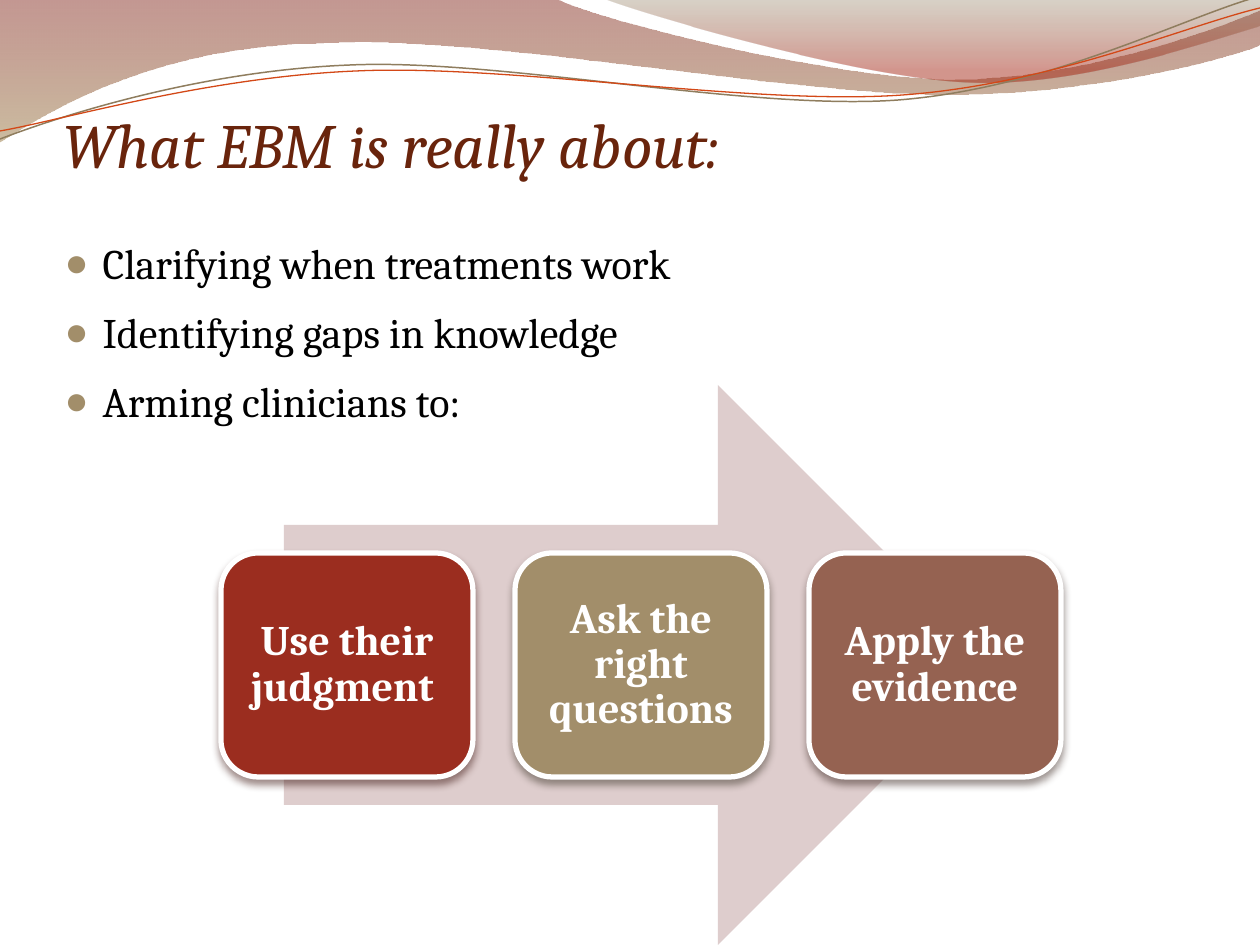
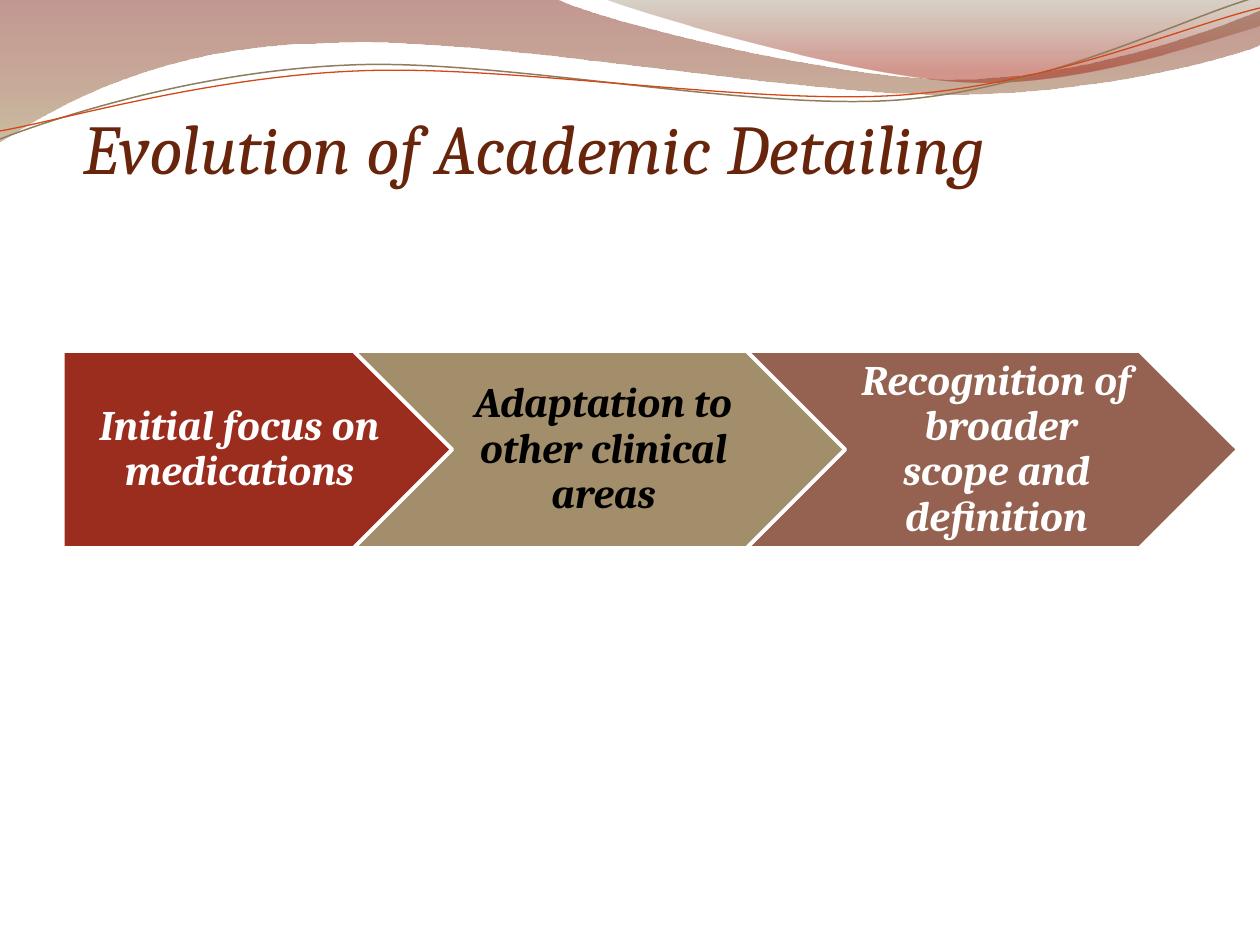
from lxml.etree import SubElement
from pptx import Presentation
from pptx.dml.color import RGBColor
from pptx.enum.shapes import MSO_SHAPE
from pptx.enum.text import MSO_ANCHOR, MSO_AUTO_SIZE, PP_ALIGN
from pptx.oxml import parse_xml
from pptx.oxml.ns import nsdecls, qn
from pptx.util import Pt

PX = 914400 / 126
FACE = "Cambria"
INK, WHITE, BLACK = "69240C", "FFFFFF", "000000"
RUST, SAND, CLAY, BLUSH = "9B2D1F", "A28E6A", "956251", "DECDCD"

# Each wave: start point, then segments of one point (line) or three (curve).
BANDS = [
    {"start": (0, 0), "segs": [
        [(556, -1)],
        [(600, 21), (837, 79), (955, 79)],
        [(1075, 79), (1207, 33), (1260, 11)],
        [(1261, 45)],
        [(1239, 55), (1096, 96), (940, 94)],
        [(784, 94), (481, 35), (324, 43)],
        [(163, 45), (58, 105), (-1, 142)]],
     "stops": [(0, "7C1A0E", 45), (100, "A18552", 55)]},
    {"start": (604, -1), "segs": [
        [(641, 14), (859, 78), (969, 82)],
        [(1079, 87), (1211, 40), (1260, 26)],
        [(1260, 0)]],
     "stops": [(0, "7E6B48", 30), (80, "9F1705", 45)]},
    {"start": (0, 139), "segs": [
        [(60, 116), (199, 71), (349, 65)],
        [(498, 58), (747, 111), (898, 100)],
        [(1050, 88), (1182, 18), (1257, -3)]],
     "line": ("8F7D5E", 0.85)},
    {"start": (0, 131), "segs": [
        [(59, 121), (207, 77), (357, 71)],
        [(508, 64), (752, 106), (903, 95)],
        [(1053, 84), (1185, 26), (1260, 8)]],
     "line": ("D34817", 0.75)},
]

ABOUT = {
    "title": ("What EBM is really about:", (63, 63, 1134, 118), 36),
    "list": ["Clarifying when treatments work",
             "Identifying gaps in knowledge",
             "Arming clinicians to:"],
    "list_box": (52, 231, 1134, 605),
    "arrow": (284, 385, 714, 560),
    "cards": [("Use their judgment ", RUST, "370F0A"),
              ("Ask the right questions", SAND, "393225"),
              ("Apply the evidence", CLAY, "35221C")],
}
STAGES = {
    "title": ("Evolution of Academic Detailing", (84, 32, 1239, 157), 40),
    "steps": [("Initial focus on medications", RUST, WHITE),
              ("Adaptation to other clinical areas", SAND, BLACK),
              ("Recognition of  broader scope and definition", CLAY, WHITE)],
}


def emu(px):
    return round(px * PX)


def rgb(code):
    return RGBColor.from_string(code)


def put(obj, **vals):
    for key, val in vals.items():
        setattr(obj, key, val)


def place(shape, box):
    put(shape, **dict(zip(("left", "top", "width", "height"), map(emu, box))))


def pad(frame, left, top, right, bottom):
    put(frame, margin_left=emu(left), margin_top=emu(top),
        margin_right=emu(right), margin_bottom=emu(bottom))


def style(font, size, color, **more):
    put(font, name=FACE, size=Pt(size), **more)
    font.color.rgb = rgb(color)


def edge(shape, color, width):
    shape.line.color.rgb = rgb(color)
    shape.line.width = Pt(width)


def bend(shape, segs):
    """Join each three straight steps of a segment into one cubic curve."""
    track = next(shape.element.spPr.iter(qn("a:path")))
    steps = iter(track.findall(qn("a:lnTo")))
    for seg in segs:
        first, *rest = [next(steps) for _ in seg]
        if rest:
            first.tag = qn("a:cubicBezTo")
            for step in rest:
                first.append(step[0])
                track.remove(step)


def fade(shape, stops):
    """Fill from top to bottom with half-clear colours."""
    marks = "".join(
        f'<a:gs pos="{pos * 1000}"><a:srgbClr val="{code}">'
        f'<a:alpha val="{alpha * 1000}"/></a:srgbClr></a:gs>'
        for pos, code, alpha in stops)
    grad = parse_xml(f'<a:gradFill {nsdecls("a")} rotWithShape="1"><a:gsLst>{marks}'
                     '</a:gsLst><a:lin ang="5400000" scaled="1"/></a:gradFill>')
    props = shape.element.spPr
    props.replace(props.find(qn("a:noFill")), grad)


def add_waves(slide, master):
    """Draw the waves and move them to the master, behind all else."""
    for i, band in enumerate(BANDS):
        pen = slide.shapes.build_freeform(*map(emu, band["start"]))
        pen.add_line_segments([(emu(x), emu(y)) for seg in band["segs"]
                               for x, y in seg], close="stops" in band)
        wave = pen.convert_to_shape()
        bend(wave, band["segs"])
        wave.shadow.inherit = False
        wave.fill.background()
        if "stops" in band:
            wave.line.fill.background()
            fade(wave, band["stops"])
        else:
            edge(wave, *band["line"])
        wave.element.nvSpPr.cNvPr.id = 20 + i
        master.shapes.element.insert(2 + i, wave.element)


def add_title(slide, text, box, size):
    title = slide.shapes.title
    place(title, box)
    frame = title.text_frame
    frame.text = text
    put(frame, vertical_anchor=MSO_ANCHOR.BOTTOM, word_wrap=True,
        auto_size=MSO_AUTO_SIZE.NONE)
    pad(frame, 0, 6, 0, 0)
    para = frame.paragraphs[0]
    para.alignment = PP_ALIGN.LEFT
    style(para.runs[0].font, size, INK, italic=True)


def add_list(slide, items, box):
    body = slide.placeholders[1]
    place(body, box)
    frame = body.text_frame
    frame.text = "\n".join(items)
    frame.auto_size = MSO_AUTO_SIZE.NONE
    for i, para in enumerate(frame.paragraphs):
        props = para._p.get_or_add_pPr()
        props.set("marL", str(emu(38)))
        props.set("indent", str(emu(-38)))
        tint = SubElement(props, qn("a:buClr"))
        SubElement(tint, qn("a:srgbClr"), val=SAND)
        SubElement(props, qn("a:buSzPct"), val="95000")
        SubElement(props, qn("a:buChar"), char="●")
        put(para, space_before=Pt(4.8 if i else 0), space_after=Pt(6))
        style(para.runs[0].font, 24, BLACK)


def add_block(slide, kind, box, fill, width=0):
    block = slide.shapes.add_shape(kind, *map(emu, box))
    block.shadow.inherit = False
    block.fill.solid()
    block.fill.fore_color.rgb = rgb(fill)
    if width:
        edge(block, WHITE, width)
    else:
        block.line.fill.background()
    return block


def label(block, text, color, pads, italic=False):
    frame = block.text_frame
    frame.text = text
    put(frame, word_wrap=True, vertical_anchor=MSO_ANCHOR.MIDDLE)
    pad(frame, *pads)
    para = frame.paragraphs[0]
    put(para, alignment=PP_ALIGN.CENTER, line_spacing=0.9)
    style(para.runs[0].font, 24, color, bold=True, italic=italic)


def drop_shade(block, color):
    block.element.spPr.find(qn("a:effectLst")).append(parse_xml(
        f'<a:outerShdw {nsdecls("a")} blurRad="{Pt(4.5)}" dist="{Pt(3)}" '
        f'dir="5400000" rotWithShape="0"><a:srgbClr val="{color}">'
        '<a:alpha val="48000"/></a:srgbClr></a:outerShdw>'))


def add_cards(slide, cards):
    for i, (text, fill, shade) in enumerate(cards):
        card = add_block(slide, MSO_SHAPE.ROUNDED_RECTANGLE,
                         (221 + 294 * i, 553, 252, 224), fill, 3)
        drop_shade(card, shade)
        label(card, text, WHITE, (12, 12, 12, 12))


def add_steps(slide, steps):
    for i, (text, fill, color) in enumerate(steps):
        kind, left, width, inset = (
            (MSO_SHAPE.CHEVRON, 393 * i - 39, 491, 13) if i
            else (MSO_SHAPE.PENTAGON, 63, 389, 18))
        step = add_block(slide, kind, (left, 351, width, 197), fill, 2)
        label(step, text, color, (inset, 9, 5, 9), italic=True)


def main():
    deck = Presentation()
    put(deck, slide_width=emu(1260), slide_height=emu(945))

    about = deck.slides.add_slide(deck.slide_layouts[1])
    add_waves(about, deck.slide_master)
    add_title(about, *ABOUT["title"])
    add_list(about, ABOUT["list"], ABOUT["list_box"])
    add_block(about, MSO_SHAPE.RIGHT_ARROW, ABOUT["arrow"], BLUSH)
    add_cards(about, ABOUT["cards"])

    stages = deck.slides.add_slide(deck.slide_layouts[5])
    add_title(stages, *STAGES["title"])
    add_steps(stages, STAGES["steps"])
    deck.save("out.pptx")


if __name__ == "__main__":
    main()
